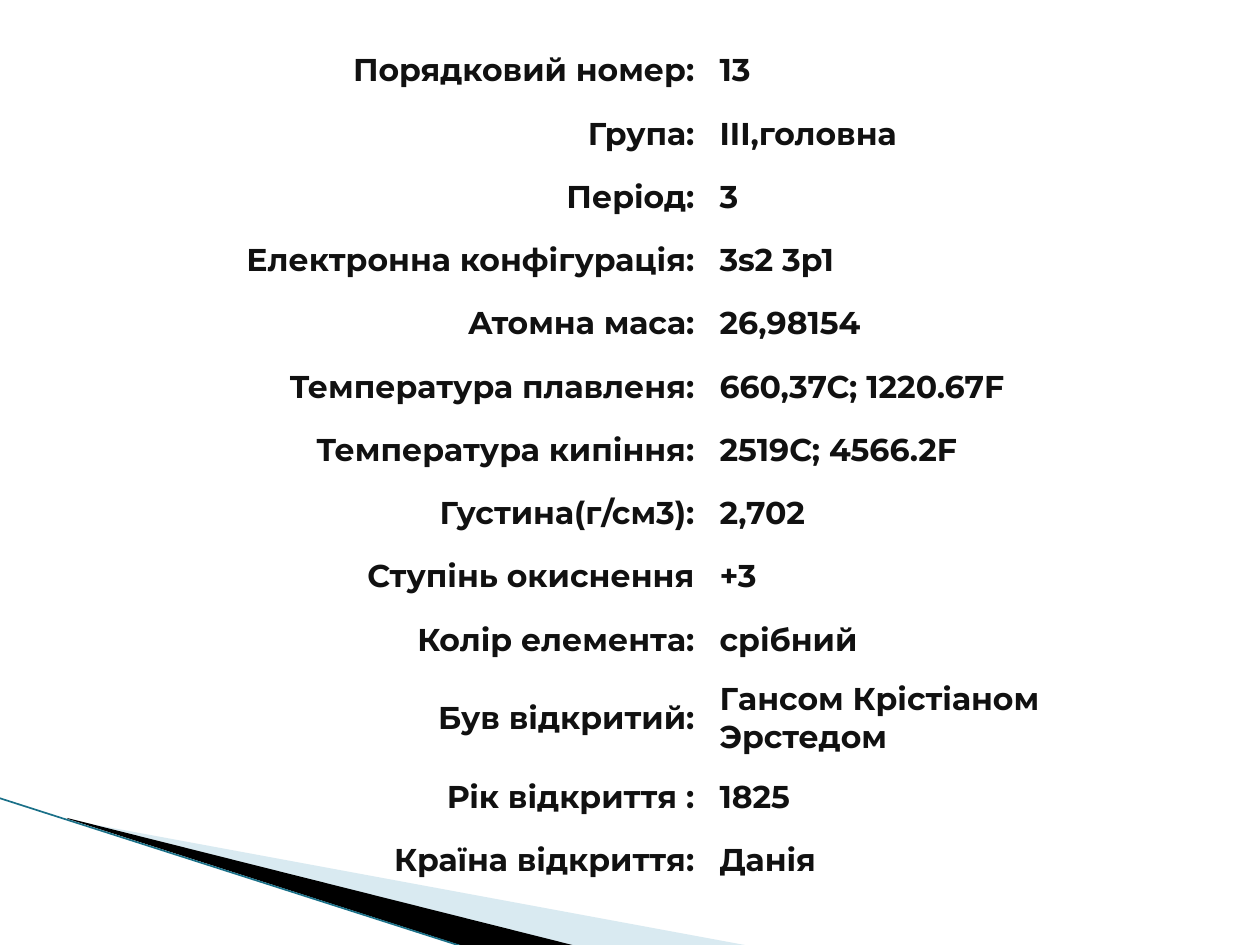
from lxml.etree import SubElement
from pptx import Presentation
from pptx.dml.color import RGBColor
from pptx.enum.shapes import MSO_CONNECTOR
from pptx.enum.text import MSO_ANCHOR, PP_ALIGN
from pptx.oxml.ns import qn
from pptx.util import Pt

SCALE = 914400 / 126
PLAIN = "{2D5ABB26-0587-4C30-8999-92F81FD0307C}"  # no style, no grid

FACTS = [
    ("Порядковий номер:", "13"),
    ("Група:", "III,головна"),
    ("Період:", "3"),
    ("Електронна конфігурація:", "3s2 3p1"),
    ("Атомна маса:", "26,98154"),
    ("Температура плавленя:", "660,37С; 1220.67F"),
    ("Температура кипіння:", "2519С; 4566.2F"),
    ("Густина(г/см3):", "2,702"),
    ("Ступінь окиснення", "+3"),
    ("Колір елемента:", "срібний"),
    ("Був відкритий:", "Гансом Крістіаном Эрстедом"),
    ("Рік відкриття :", "1825"),
    ("Країна відкриття:", "Данія"),
]
TALL = 10  # the row whose value takes two lines


def px(size):
    return round(size * SCALE)


def color(code):
    return RGBColor.from_string(code)


def write(frame, text, font="Montserrat", size=18, ink="111111", bold=True,
          align=PP_ALIGN.LEFT):
    para = frame.paragraphs[0]
    para.alignment = align
    run = para.add_run()
    run.text = text
    run.font.name = font
    run.font.size = Pt(size)
    run.font.bold = bold
    run.font.color.rgb = color(ink)


def reframe(shape, box):
    """Give a freeform a new frame while its outline stays in place."""
    left, top, width, height = [px(v) for v in box]
    route = shape._element.spPr.find(".//" + qn("a:path"))
    for point in route.iter(qn("a:pt")):
        point.set("x", str(int(point.get("x")) + shape.left - left))
        point.set("y", str(int(point.get("y")) + shape.top - top))
    route.set("w", str(width))
    route.set("h", str(height))
    shape.left, shape.top, shape.width, shape.height = left, top, width, height


class Page:
    """Holds the slide and its style, and draws on it."""

    def __init__(self, slide):
        self.slide = slide
        self.shapes = slide.shapes

    def wedge(self, box, points, fill, alpha=100):
        """Draw a filled outline in a frame; alpha is its opacity in percent."""
        start, *rest = [(px(x), px(y)) for x, y in points]
        build = self.shapes.build_freeform(*start)
        build.add_line_segments(rest, close=True)
        shape = build.convert_to_shape()
        reframe(shape, box)
        shape.shadow.inherit = False
        shape.line.fill.background()
        shape.fill.solid()
        shape.fill.fore_color.rgb = color(fill)
        if alpha < 100:
            tint = shape._element.spPr.find(".//" + qn("a:srgbClr"))
            SubElement(tint, qn("a:alpha"), val=str(alpha * 1000))

    def line(self, start, end, ink, width):
        ends = [px(v) for v in (*start, *end)]
        line = self.shapes.add_connector(MSO_CONNECTOR.STRAIGHT, *ends)
        line.line.color.rgb = color(ink)
        line.line.width = Pt(width)
        SubElement(line._element.spPr, qn("a:effectLst"))

    def table(self, left, top, widths, heights, rows):
        box = [px(v) for v in (left, top, sum(widths), sum(heights))]
        table = self.shapes.add_table(len(rows), len(widths), *box).table
        table.first_row = table.horz_banding = False
        table._tbl.tblPr.find(qn("a:tableStyleId")).text = PLAIN
        for col, width in zip(table.columns, widths):
            col.width = px(width)
        for row, height, texts in zip(table.rows, heights, rows):
            row.height = px(height)
            aligns = (PP_ALIGN.RIGHT, PP_ALIGN.LEFT)
            for cell, text, align in zip(row.cells, texts, aligns):
                cell.fill.background()
                cell.vertical_anchor = MSO_ANCHOR.MIDDLE
                write(cell.text_frame, text, align=align)


def main():
    deck = Presentation()
    deck.slide_width, deck.slide_height = px(1260), px(945)
    page = Page(deck.slides.add_slide(deck.slide_layouts[6]))

    page.wedge((98, 689, 524, 199),
               [(69, 820), (750, 946), (575, 946), (69, 819)], "A0CBDC", alpha=40)
    page.wedge((-8, 798, 524, 116),
               [(67, 818), (576, 946), (469, 948), (68, 819)], "000000")
    page.line((-1, 798), (467, 948), "1A7088", 0.95)

    total, tall = 853, 94
    heights = [(total - tall) / (len(FACTS) - 1)] * len(FACTS)
    heights[TALL] = tall
    page.table(98, 39, (609, 448), heights, FACTS)

    deck.save("out.pptx")


if __name__ == "__main__":
    main()
